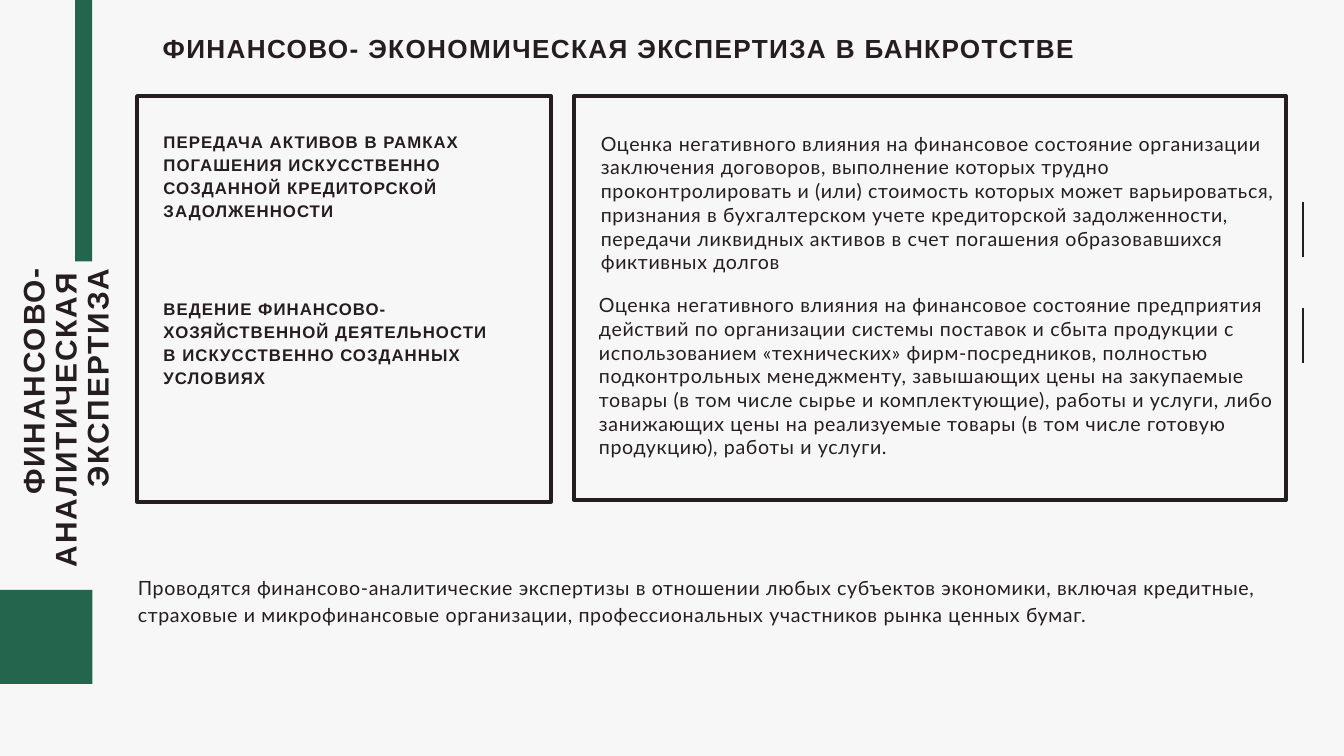
"""Build a slide on financial and economic expert review in bankruptcy."""
from lxml import etree
from pptx import Presentation
from pptx.dml.color import RGBColor
from pptx.enum.shapes import MSO_CONNECTOR, MSO_SHAPE
from pptx.enum.text import MSO_ANCHOR, PP_ALIGN
from pptx.oxml.ns import qn
from pptx.util import Cm, Pt

RECTANGLE = MSO_SHAPE.RECTANGLE
STRAIGHT = MSO_CONNECTOR.STRAIGHT
TOP = MSO_ANCHOR.TOP
LEFT, CENTER = PP_ALIGN.LEFT, PP_ALIGN.CENTER
COLORS = {
    name: RGBColor.from_string(value)
    for name, value in {"paper": "F7F7F7", "ink": "251D20", "green": "24664D"}.items()
}


def add_rectangle(box, fill, outlined=False):
    shape = slide.shapes.add_shape(RECTANGLE, *map(Cm, box))
    shape.shadow.inherit = False
    shape.fill.solid()
    shape.fill.fore_color.rgb = COLORS[fill]
    if outlined:
        shape.line.color.rgb = COLORS["ink"]
        shape.line.width = Pt(4.14)
    else:
        shape.line.fill.background()
    return shape


def write(shape, texts, font, size, tracking, line_height=None, gap=0,
          indents=(0,), top=0, bold=False, align=LEFT):
    frame = shape.text_frame
    frame.word_wrap = True
    frame.vertical_anchor = TOP
    frame.margin_left = frame.margin_right = frame.margin_bottom = 0
    frame.margin_top = Cm(top)
    for index, text in enumerate(texts):
        paragraph = frame.add_paragraph() if index else frame.paragraphs[0]
        paragraph.text = text
        paragraph.alignment = align
        if line_height:
            paragraph.line_spacing = Pt(line_height)
        if index and gap:
            paragraph.space_before = Pt(gap)
        paragraph.font.name = font
        paragraph.font.size = Pt(size)
        paragraph.font.bold = bold
        paragraph.font.color.rgb = COLORS["ink"]
        properties = paragraph._p.get_or_add_pPr()
        properties.set("marL", str(Cm(indents[index % len(indents)])))
        properties.find(qn("a:defRPr")).set("spc", str(round(tracking * 100)))


presentation = Presentation()
presentation.slide_width, presentation.slide_height = Cm(50.8), Cm(28.58)
slide = presentation.slides.add_slide(presentation.slide_layouts[6])
slide.background.fill.solid()
slide.background.fill.fore_color.rgb = COLORS["paper"]

for top in (11.63, 7.62):
    tick = slide.shapes.add_connector(STRAIGHT, Cm(49.25), Cm(top), Cm(49.25), Cm(top + 2.11))
    tick.line.color.rgb = COLORS["ink"]
    tick.line.width = Pt(3)
    etree.SubElement(tick._element.spPr, qn("a:effectLst"))

for box in ((2.84, 0, 0.64, 9.88), (0, 22.3, 3.49, 3.56)):
    add_rectangle(box, "green")

title = slide.shapes.add_textbox(Cm(6.15), Cm(1.12), Cm(43.41), Cm(1.24))
write(title, ["ФИНАНСОВО- ЭКОНОМИЧЕСКАЯ ЭКСПЕРТИЗА В БАНКРОТСТВЕ"],
      "Arial", 28, 1.5, top=0.12, bold=True)

schemes = add_rectangle((5.18, 3.63, 15.65, 15.34), "paper", outlined=True)
write(schemes, [
    "ПЕРЕДАЧА АКТИВОВ В РАМКАХ\vПОГАШЕНИЯ ИСКУССТВЕННО\v"
    "СОЗДАННОЙ КРЕДИТОРСКОЙ\vЗАДОЛЖЕННОСТИ",
    "ВЕДЕНИЕ ФИНАНСОВО-\vХОЗЯЙСТВЕННОЙ ДЕЯТЕЛЬНОСТИ\v"
    "В ИСКУССТВЕННО СОЗДАННЫХ\vУСЛОВИЯХ",
], "Arial", 18, 1.1, 24.6, gap=80.4, indents=(1,), top=1.24, bold=True)

assessments = add_rectangle((21.69, 3.63, 26.92, 15.27), "paper", outlined=True)
write(assessments, [
    "Оценка негативного влияния на финансовое состояние организации "
    "заключения договоров, выполнение которых трудно "
    "проконтролировать и (или) стоимость которых может варьироваться, "
    "признания в бухгалтерском учете кредиторской задолженности, "
    "передачи ликвидных активов в счет погашения образовавшихся "
    "фиктивных долгов",
    "Оценка негативного влияния на финансовое состояние предприятия "
    "действий по организации системы поставок и сбыта продукции с "
    "использованием «технических» фирм-посредников, полностью "
    "подконтрольных менеджменту, завышающих цены на закупаемые "
    "товары (в том числе сырье и комплектующие), работы и услуги, либо "
    "занижающих цены на реализуемые товары (в том числе готовую "
    "продукцию), работы и услуги.",
], "Lato", 21, 0.7, 25.4, gap=20.7, indents=(1.02, 0.95), top=1.34)

scope = slide.shapes.add_textbox(Cm(5.21), Cm(21.59), Cm(42.34), Cm(2.13))
write(scope, [
    "Проводятся финансово-аналитические экспертизы в отношении любых "
    "субъектов экономики, включая кредитные, страховые и "
    "микрофинансовые организации, профессиональных участников рынка "
    "ценных бумаг.",
], "Lato", 21, 0.7, 28.9, top=0.05)

side_title = slide.shapes.add_textbox(Cm(0.71), Cm(9.88), Cm(3.71), Cm(12.01))
side_title.text_frame._txBody.bodyPr.set("vert", "vert270")
write(side_title, ["ФИНАНСОВО-", "АНАЛИТИЧЕСКАЯ", "ЭКСПЕРТИЗА"],
      "Arial", 32, 2, 34.2, indents=(2.92, 0, 3.18), bold=True, align=CENTER)

presentation.save("out.pptx")
